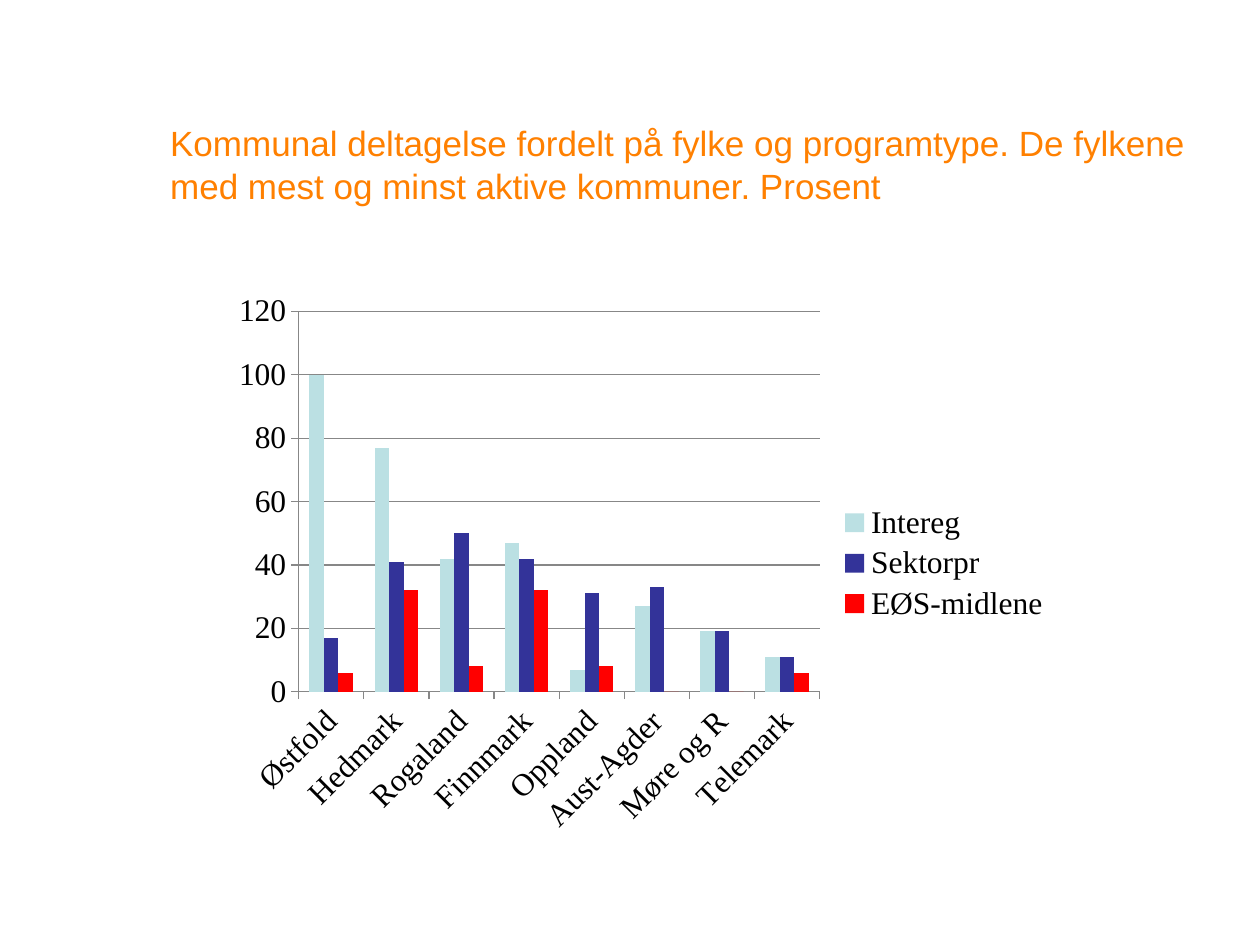
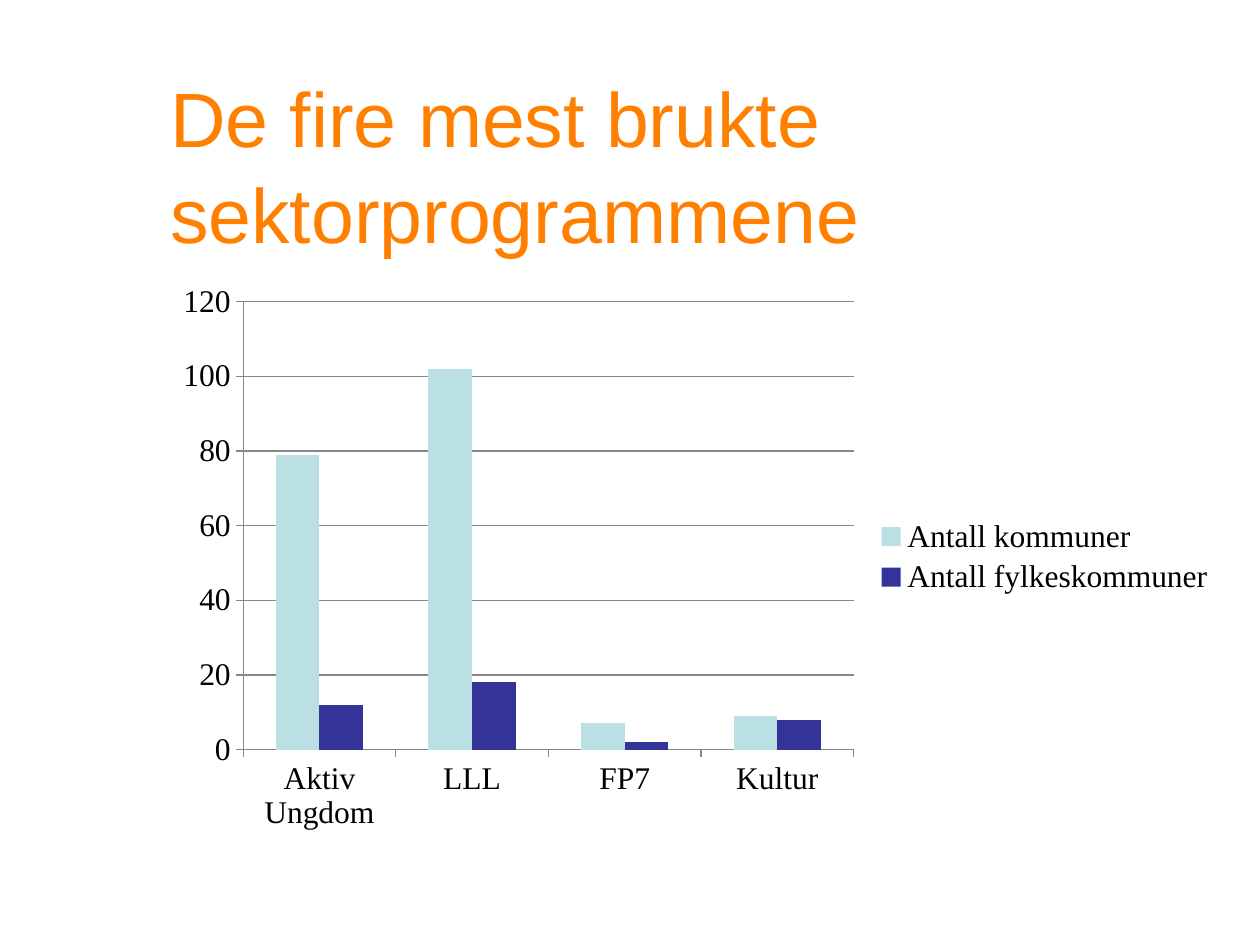
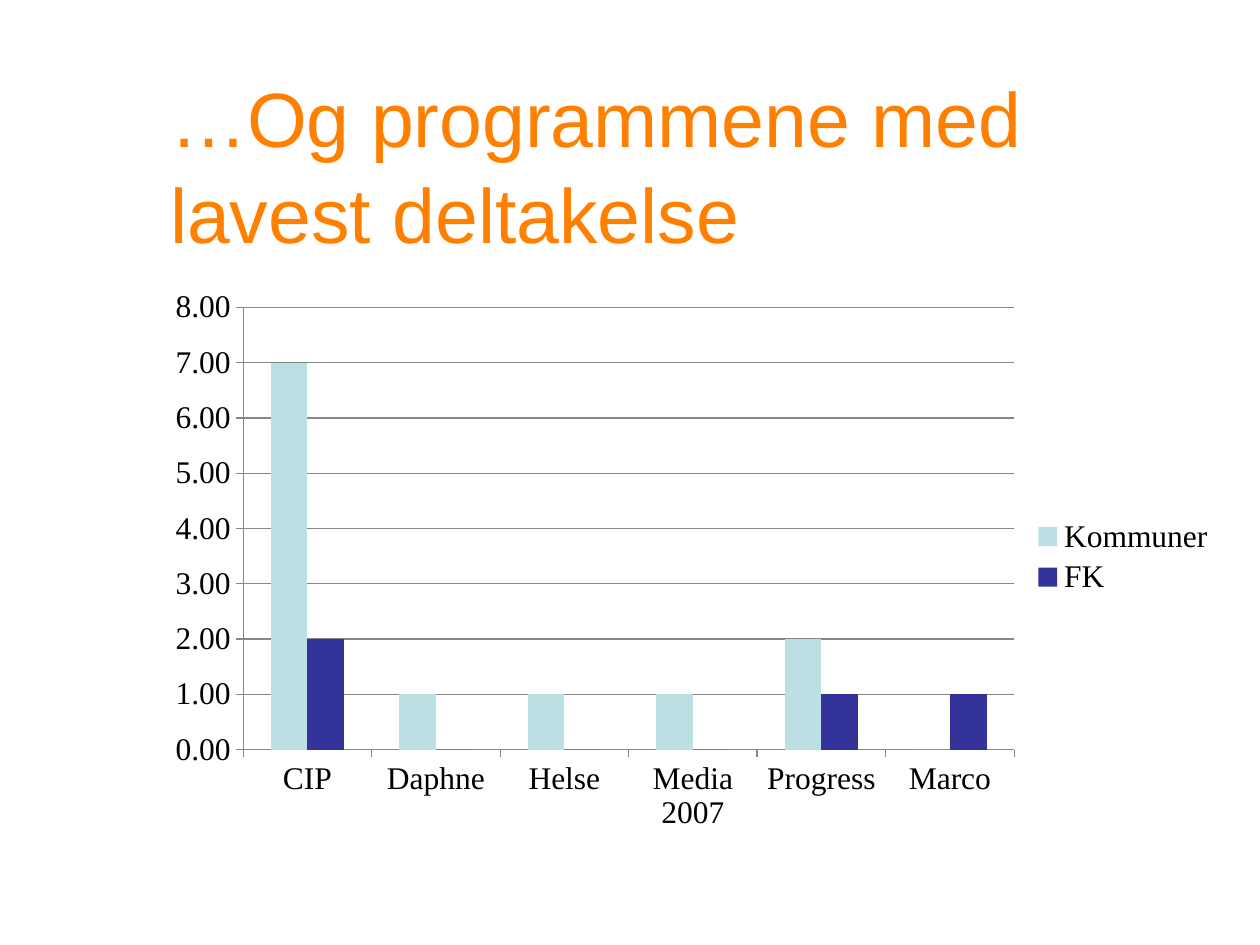
from pptx import Presentation
from pptx.chart.data import CategoryChartData
from pptx.dml.color import RGBColor
from pptx.enum.chart import XL_CHART_TYPE, XL_LEGEND_POSITION, XL_TICK_MARK
from pptx.enum.text import MSO_ANCHOR, MSO_AUTO_SIZE, PP_ALIGN
from pptx.oxml import parse_xml
from pptx.oxml.ns import nsdecls
from pptx.util import Inches, Pt

COLUMNS = XL_CHART_TYPE.COLUMN_CLUSTERED
LEGEND_RIGHT = XL_LEGEND_POSITION.RIGHT
TICK_OUTSIDE = XL_TICK_MARK.OUTSIDE
TITLE_ONLY_LAYOUT = 5

# Shared look
SERIES_COLORS = ("BBE0E3", "333399", "FF0000")
TITLE_COLOR = "FF8000"
LINE_COLOR = "878787"
TITLE_BOX = (1.25, 0.67, 8.5, 1.25)
CHART_BOX = (1.25, 2.17, 8.5, 4.5)
TITLE_FRAME_FORMAT = {
    "word_wrap": True,
    "auto_size": MSO_AUTO_SIZE.NONE,
    "vertical_anchor": MSO_ANCHOR.MIDDLE,
}
TITLE_PARAGRAPH_FORMAT = {"alignment": PP_ALIGN.LEFT, "line_spacing": 1.04}
CHART_FONT = {"name": "Times New Roman", "size": Pt(18), "bold": False}

# Plot boxes are fractions of the chart: left, top, width, height
SLIDES = [
    {
        "title": "Kommunal deltagelse fordelt på fylke og programtype. "
                 "De fylkene med mest og minst aktive kommuner. Prosent",
        "title_size": 20,
        "box": (1.77, 2.25, 6.67, 4.44),
        "plot": (0.09, 0.05, 0.62, 0.68),
        "maximum": 120,
        "step": 20,
        "label_angle": -45,
        "plot_fill": "FFFFFF",
        "categories": ["Østfold", "Hedmark", "Rogaland", "Finnmark",
                       "Oppland", "Aust-Agder", "Møre og R", "Telemark"],
        "series": {
            "Intereg": [100, 77, 42, 47, 7, 27, 19, 11],
            "Sektorpr": [17, 41, 50, 42, 31, 33, 19, 11],
            "EØS-midlene": [6, 32, 8, 32, 8, 0, 0, 6],
        },
    },
    {
        "title": "De fire mest brukte sektorprogrammene",
        "plot": (0.08, 0.05, 0.57, 0.79),
        "maximum": 120,
        "step": 20,
        "categories": ["Aktiv Ungdom", "LLL", "FP7", "Kultur"],
        "series": {
            "Antall kommuner": [79, 102, 7, 9],
            "Antall fylkeskommuner": [12, 18, 2, 8],
        },
    },
    {
        "title": "…Og programmene med lavest deltakelse",
        "plot": (0.08, 0.06, 0.72, 0.78),
        "maximum": 8,
        "step": 1,
        "number_format": "#,##0.00",
        "categories": ["CIP", "Daphne", "Helse", "Media 2007",
                       "Progress", "Marco"],
        "series": {
            "Kommuner": [7, 1, 1, 1, 2, 0],
            "FK": [2, 0, 0, 0, 1, 1],
        },
    },
]


def color(hex_value):
    return RGBColor.from_string(hex_value)


def apply_format(target, values):
    for name, value in values.items():
        setattr(target, name, value)


def place(shape, box):
    for name, length in zip(("left", "top", "width", "height"), box):
        setattr(shape, name, Inches(length))


def set_font(font, values, hex_value):
    apply_format(font, values)
    font.color.rgb = color(hex_value)


def set_title(slide, text, size):
    title = slide.shapes.title
    place(title, TITLE_BOX)
    frame = title.text_frame
    apply_format(frame, TITLE_FRAME_FORMAT)
    frame.text = text
    paragraph = frame.paragraphs[0]
    apply_format(paragraph, TITLE_PARAGRAPH_FORMAT)
    set_font(paragraph.runs[0].font, {"name": "Arial", "size": Pt(size)},
             TITLE_COLOR)


def set_plot_area(chart, box, fill):
    """Fix the inner plot box and, if wanted, fill it."""
    plot_area = chart.plots[0]._element.getparent()
    for layout in plot_area.findall("{*}layout"):
        plot_area.remove(layout)
    modes = "".join(f'<c:{side}Mode val="edge"/>' for side in "xy")
    values = "".join(f'<c:{name} val="{value}"/>'
                     for name, value in zip("xywh", box))
    plot_area.insert(0, parse_xml(
        f'<c:layout {nsdecls("c")}><c:manualLayout>'
        f'<c:layoutTarget val="inner"/>{modes}{values}'
        '</c:manualLayout></c:layout>'))
    if fill:
        plot_area.append(parse_xml(
            f'<c:spPr {nsdecls("c", "a")}><a:solidFill>'
            f'<a:srgbClr val="{fill}"/></a:solidFill></c:spPr>'))


def format_axes(chart, content):
    value_axis, category_axis = chart.value_axis, chart.category_axis
    apply_format(value_axis, {
        "minimum_scale": 0,
        "maximum_scale": content["maximum"],
        "major_unit": content["step"],
        "has_major_gridlines": True,
    })
    apply_format(value_axis.tick_labels, {
        "number_format": content.get("number_format", "General"),
        "number_format_is_linked": False,
    })
    for axis in (value_axis, category_axis):
        axis.major_tick_mark = TICK_OUTSIDE
        set_font(axis.tick_labels.font, CHART_FONT, "000000")
    for line in (value_axis.format.line, category_axis.format.line,
                 value_axis.major_gridlines.format.line):
        line.color.rgb = color(LINE_COLOR)
        line.width = Pt(0.75)
    if "label_angle" in content:
        body = category_axis._element.txPr.bodyPr
        body.set("rot", str(content["label_angle"] * 60000))


def add_column_chart(slide, content):
    data = CategoryChartData()
    data.categories = content["categories"]
    for name, values in content["series"].items():
        data.add_series(name, values)
    box = content.get("box", CHART_BOX)
    chart = slide.shapes.add_chart(
        COLUMNS, *(Inches(length) for length in box), data).chart
    chart.has_title = False
    set_font(chart.font, CHART_FONT, "000000")

    # Columns
    plot = chart.plots[0]
    apply_format(plot, {"gap_width": 150, "overlap": 0,
                        "vary_by_categories": False})
    for series, hex_value in zip(plot.series, SERIES_COLORS):
        series.format.fill.solid()
        series.format.fill.fore_color.rgb = color(hex_value)

    # Axes, legend and plot area
    format_axes(chart, content)
    chart.has_legend = True
    apply_format(chart.legend, {"position": LEGEND_RIGHT,
                                "include_in_layout": False})
    set_font(chart.legend.font, CHART_FONT, "000000")
    set_plot_area(chart, content["plot"], content.get("plot_fill"))


def main():
    presentation = Presentation()
    presentation.slide_width = Inches(10)
    presentation.slide_height = Inches(7.5)
    layout = presentation.slide_layouts[TITLE_ONLY_LAYOUT]
    for content in SLIDES:
        slide = presentation.slides.add_slide(layout)
        set_title(slide, content["title"], content.get("title_size", 44))
        add_column_chart(slide, content)
    presentation.save("out.pptx")


if __name__ == "__main__":
    main()
